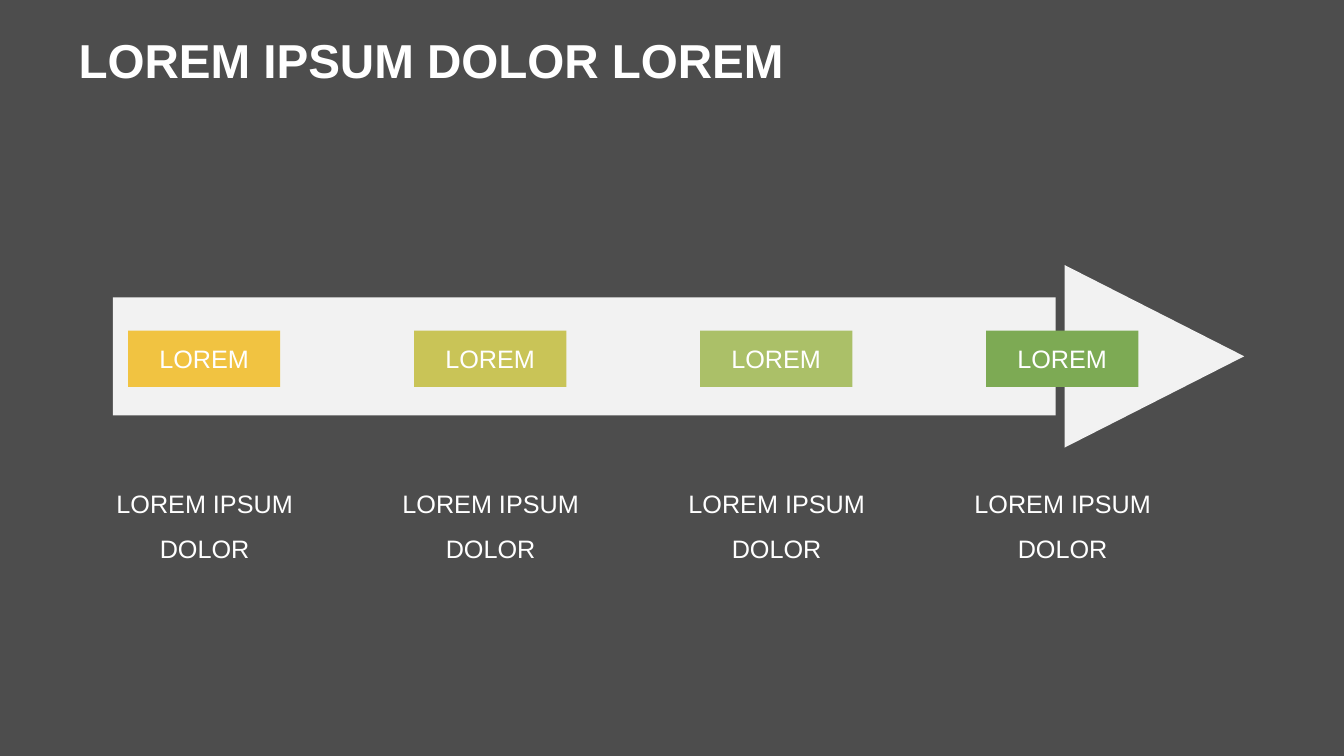
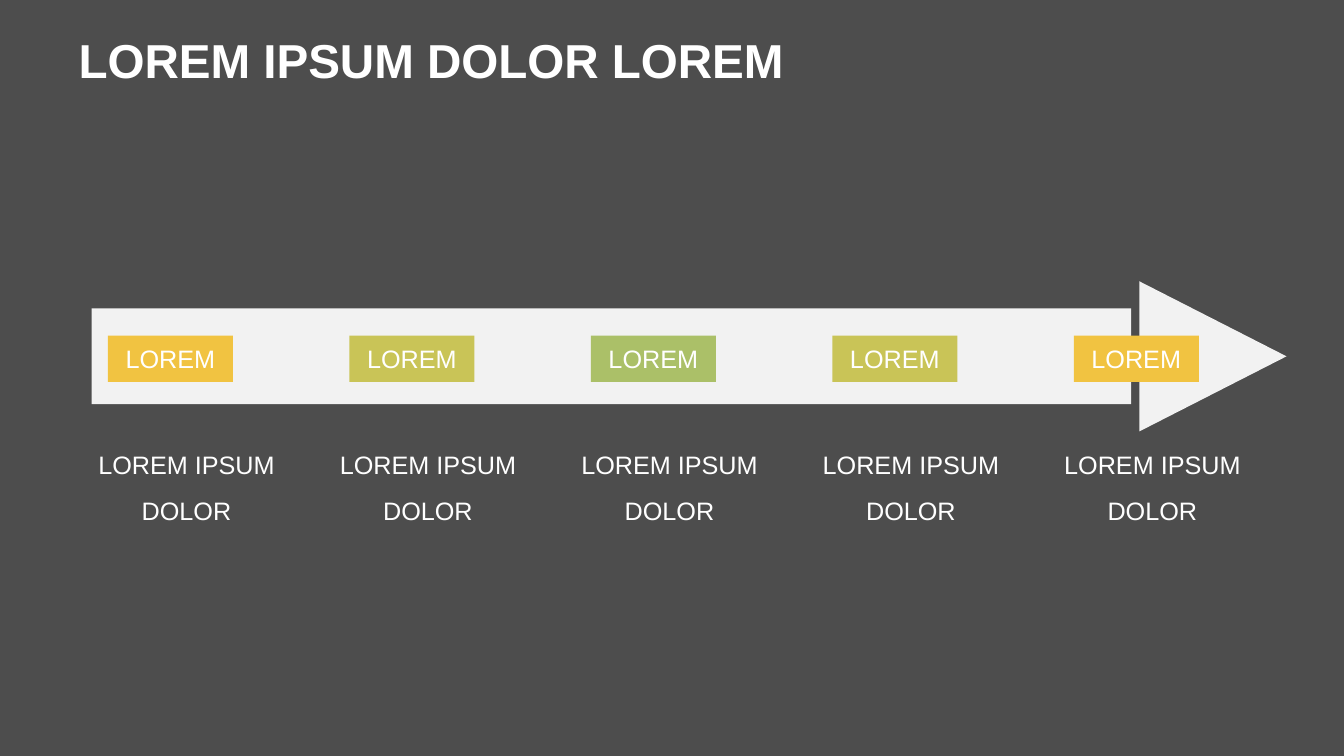
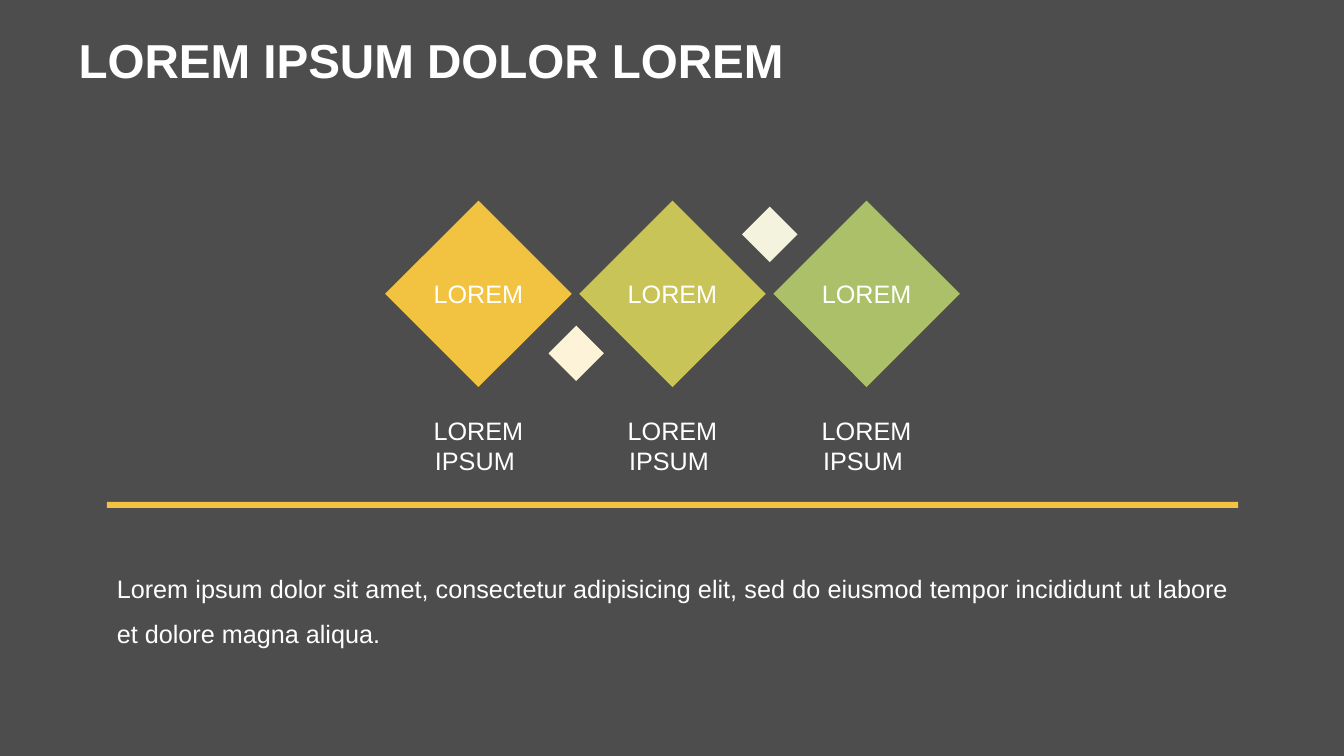
from pptx import Presentation
from pptx import util as u
from pptx.dml.color import RGBColor
from pptx.enum import shapes, text

GREY, WHITE, PALE = "4D4D4D", "FFFFFF", "F2F2F2"
YELLOW, OLIVE, LIME, GREEN = "F1C341", "C9C457", "ABC068", "7DAA54"
CREAM, IVORY = "FCF3D9", "F4F3DD"
CENTER, LEFT, JUSTIFY = text.PP_ALIGN.CENTER, text.PP_ALIGN.LEFT, text.PP_ALIGN.JUSTIFY
TOP, MIDDLE = text.MSO_ANCHOR.TOP, text.MSO_ANCHOR.MIDDLE
RECT, DIAMOND = shapes.MSO_SHAPE.RECTANGLE, shapes.MSO_SHAPE.DIAMOND


def color(value):
    return RGBColor.from_string(value)


def spread(first, last, count):
    """Equally spaced positions from first to last."""
    return [first + i * (last - first) / (count - 1) for i in range(count)]


class Deck:
    FONT = "Arial"

    def __init__(self):
        self.prs = Presentation()
        self.prs.slide_width, self.prs.slide_height = u.Inches(13.33), u.Inches(7.5)
        fill = self.prs.slide_master.background.fill
        fill.solid()
        fill.fore_color.rgb = color(GREY)
        self.slide = None

    def new_slide(self, heading):
        self.slide = self.prs.slides.add_slide(self.prs.slide_layouts[5])
        title = self.slide.shapes.title
        title.left, title.top = u.Inches(0.68), u.Inches(0.19)
        title.width, title.height = u.Inches(11.98), u.Inches(0.87)
        self.set_text(title, heading, size=34, bold=True, align=LEFT, spacing=0.9)

    def set_text(self, shape, words, size=18, bold=False, align=CENTER,
                 anchor=MIDDLE, spacing=1.0, inset=True):
        frame = shape.text_frame
        frame.text = words
        frame.word_wrap = True
        frame.auto_size = text.MSO_AUTO_SIZE.NONE
        frame.vertical_anchor = anchor
        if not inset:
            frame.margin_left = frame.margin_right = 0
            frame.margin_top = frame.margin_bottom = 0
        paragraph = frame.paragraphs[0]
        paragraph.alignment, paragraph.line_spacing = align, spacing
        font = paragraph.runs[0].font
        font.name, font.size, font.bold = self.FONT, u.Pt(size), bold
        font.color.rgb = color(WHITE)

    def paint(self, shape, fill):
        shape.shadow.inherit = False
        shape.fill.solid()
        shape.fill.fore_color.rgb = color(fill)
        shape.line.fill.background()

    def block(self, kind, box, fill, words=None, **style):
        shape = self.slide.shapes.add_shape(kind, *map(u.Inches, box))
        self.paint(shape, fill)
        if words:
            self.set_text(shape, words, **style)

    def label(self, box, words, **style):
        self.set_text(self.slide.shapes.add_textbox(*map(u.Inches, box)), words, **style)

    def arrow(self, shaft, head):
        """Shaft and head, each given as left, top, right, bottom."""
        left, top, right, bottom = map(u.Inches, shaft)
        base, high, tip, low = map(u.Inches, head)
        outline = self.slide.shapes.build_freeform(left, top)
        outline.add_line_segments([(right, top), (right, bottom), (left, bottom)])
        outline.move_to(base, high)
        outline.add_line_segments([(tip, (high + low) // 2), (base, low)])
        self.paint(outline.convert_to_shape(), PALE)

    def timeline(self, fills, chip, last_chip, caption):
        """Chips from the first box to last_chip, each with a caption below."""
        left, top, width, height = chip
        shift = caption[0] - left
        for x, fill in zip(spread(left, last_chip, len(fills)), fills):
            self.block(RECT, (x, top, width, height), fill, "LOREM")
            self.label((x + shift, *caption[1:]), "LOREM IPSUM DOLOR",
                       anchor=TOP, spacing=1.5, inset=False)


def main():
    deck = Deck()
    heading = "LOREM IPSUM DOLOR LOREM"

    # Four-step arrow
    deck.new_slide(heading)
    deck.arrow((1.12, 2.95, 10.47, 4.12), (10.56, 2.63, 12.34, 4.44))
    deck.timeline([YELLOW, OLIVE, LIME, GREEN],
                  (1.27, 3.28, 1.51, 0.56), 9.78, (1, 4.69, 2.06, 1.66))

    # Five-step arrow
    deck.new_slide(heading)
    deck.arrow((0.91, 3.06, 11.22, 4.01), (11.3, 2.79, 12.76, 4.28))
    deck.timeline([YELLOW, OLIVE, LIME, OLIVE, YELLOW],
                  (1.07, 3.33, 1.24, 0.46), 10.65, (0.85, 4.31, 2, 1.64))

    # Diamond row with captions
    deck.new_slide(heading)
    fills = [YELLOW, OLIVE, LIME]
    for x, fill in zip(spread(3.82, 7.67, len(fills)), fills):
        deck.block(DIAMOND, (x, 1.99, 1.85, 1.85), fill, "LOREM", inset=False)
        deck.label((x + 0.04, 4.07, 1.77, 0.89), "LOREM IPSUM ", anchor=TOP)
    for x, y, fill in [(5.44, 3.23, CREAM), (7.36, 2.05, IVORY)]:
        deck.block(DIAMOND, (x, y, 0.55, 0.55), fill)

    # Divider and summary
    deck.block(RECT, (1.06, 4.98, 11.22, 0.06), YELLOW)
    deck.label((1.06, 5.31, 11.22, 1.35),
               "Lorem ipsum dolor sit amet, consectetur adipisicing elit, sed do "
               "eiusmod tempor incididunt ut labore et dolore magna aliqua.",
               align=JUSTIFY, spacing=1.5)

    deck.prs.save("out.pptx")


if __name__ == "__main__":
    main()
